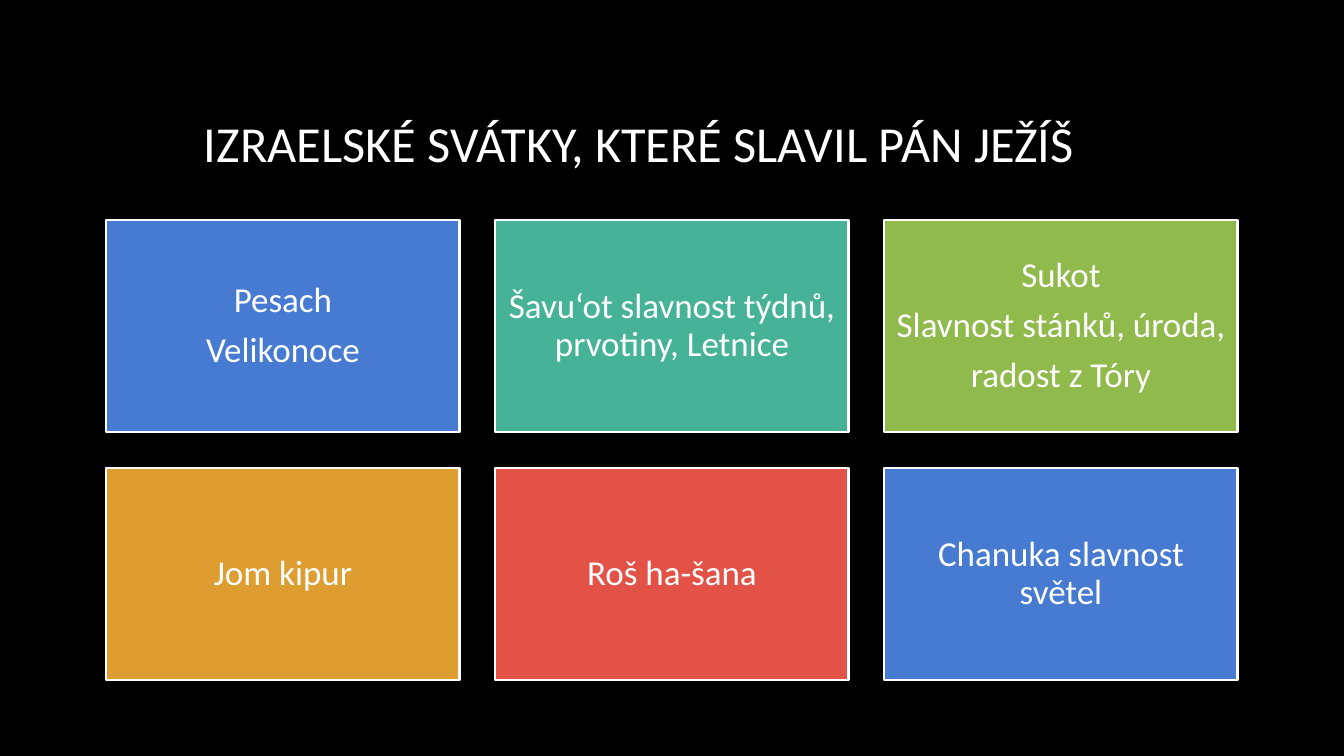
from pptx import Presentation
from pptx.dml.color import RGBColor
from pptx.enum.shapes import MSO_SHAPE
from pptx.enum.text import MSO_ANCHOR, PP_ALIGN
from pptx.util import Emu, Pt

RECT = MSO_SHAPE.RECTANGLE
MIDDLE = MSO_ANCHOR.MIDDLE
LEFT, CENTER = PP_ALIGN.LEFT, PP_ALIGN.CENTER

PX_PER_INCH = 100.8
BLACK, WHITE = "000000", "FFFFFF"
BLUE, TEAL, GREEN, AMBER, RED = "477BD1", "46B298", "90BA4C", "DD9D31", "E25247"

TITLE = "IZRAELSKÉ SVÁTKY, KTERÉ SLAVIL PÁN JEŽÍŠ"
FEASTS = [
    (BLUE, ["Pesach", "Velikonoce"]),
    (TEAL, ["Šavu‘ot slavnost týdnů, prvotiny, Letnice"]),
    (GREEN, ["Sukot", "Slavnost stánků, úroda,", "radost z Tóry"]),
    (AMBER, ["Jom kipur"]),
    (RED, ["Roš ha-šana"]),
    (BLUE, ["Chanuka slavnost světel"]),
]

COLUMNS = 3
GRID_X, GRID_Y = 106, 220
CARD_W, CARD_H = 354, 212
STEP_X, STEP_Y = 389, 248


def px(n):
    return Emu(round(n * 914400 / PX_PER_INCH))


def rgb(value):
    return RGBColor.from_string(value)


class Deck:
    font = "Calibri"
    text_color = WHITE
    inset = 10

    def __init__(self, prs, background):
        self.s = prs.slides.add_slide(prs.slide_layouts[6])
        fill = self.s.background.fill
        fill.solid()
        fill.fore_color.rgb = rgb(background)

    def set_text(self, sp, lines, size, align, after=0):
        tf = sp.text_frame
        tf.word_wrap = True
        tf.vertical_anchor = MIDDLE
        tf.margin_left = tf.margin_right = px(self.inset)
        tf.margin_top = tf.margin_bottom = px(self.inset)
        for i, line in enumerate(lines):
            p = tf.add_paragraph() if i else tf.paragraphs[0]
            p.text = line
            p.alignment = align
            p.line_spacing = 0.9
            p.space_after = Pt(after)
            p.font.name = self.font
            p.font.size = Pt(size)
            p.font.color.rgb = rgb(self.text_color)

    def title(self, x, y, w, h, text):
        sp = self.s.shapes.add_textbox(px(x), px(y), px(w), px(h))
        self.set_text(sp, [text], 36, LEFT)

    def card(self, x, y, w, h, color, lines):
        sp = self.s.shapes.add_shape(RECT, px(x), px(y), px(w), px(h))
        sp.shadow.inherit = False
        sp.fill.solid()
        sp.fill.fore_color.rgb = rgb(color)
        sp.line.color.rgb = rgb(WHITE)
        sp.line.width = Pt(2)
        self.set_text(sp, lines, 25, CENTER, after=8.75)


def main():
    prs = Presentation()
    prs.slide_width, prs.slide_height = px(1344), px(756)
    deck = Deck(prs, BLACK)
    deck.title(194, 88, 957, 116, TITLE)
    for i, (color, lines) in enumerate(FEASTS):
        row, col = divmod(i, COLUMNS)
        deck.card(GRID_X + col * STEP_X, GRID_Y + row * STEP_Y,
                  CARD_W, CARD_H, color, lines)
    prs.save("out.pptx")


if __name__ == "__main__":
    main()
